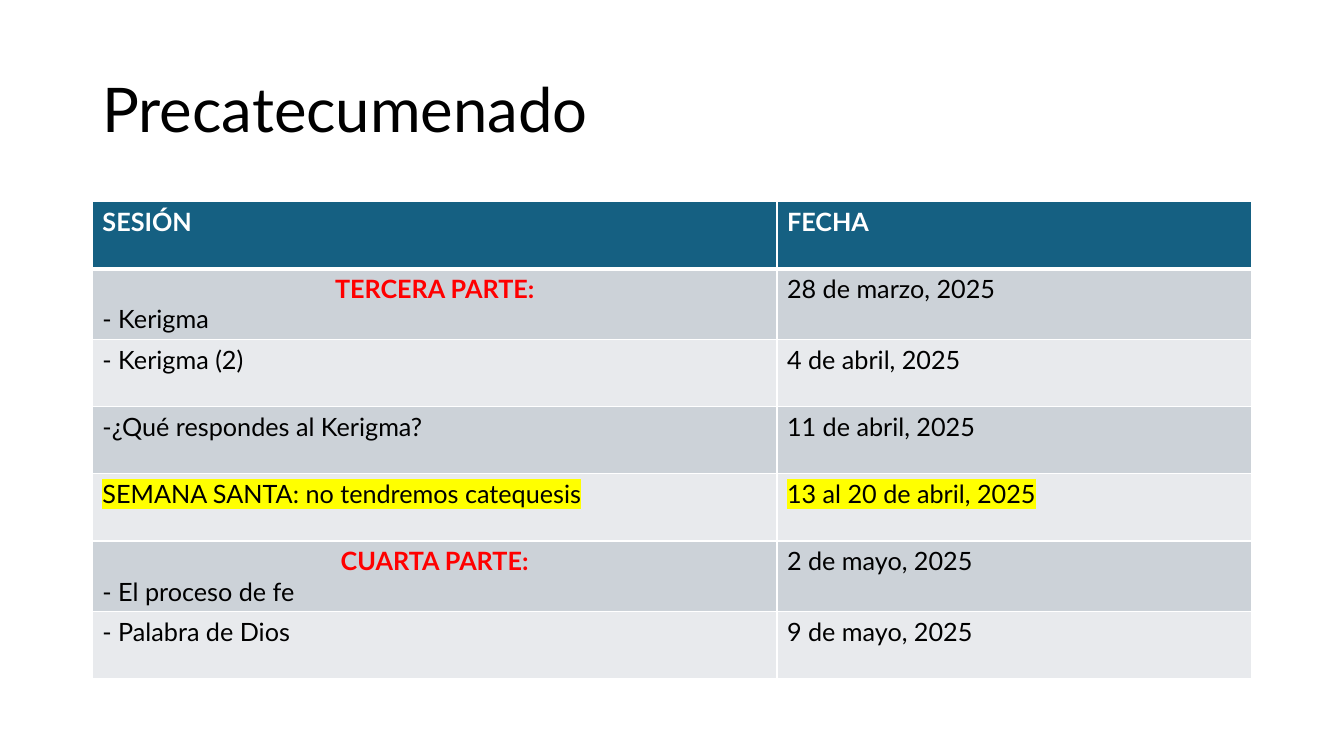
from lxml import etree
from pptx import Presentation
from pptx import util as u
from pptx.dml.color import RGBColor
from pptx.enum import text
from pptx.oxml import ns

PX = 9525  # 96 px to the inch
FONT = "Lato"
BLACK = RGBColor(0x00, 0x00, 0x00)
WHITE = RGBColor(0xFF, 0xFF, 0xFF)
RED = RGBColor(0xFF, 0x00, 0x00)
YELLOW = RGBColor(0xFF, 0xFF, 0x00)
HEADER = RGBColor(0x15, 0x60, 0x82)
BANDS = (RGBColor(0xCC, 0xD2, 0xD8), RGBColor(0xE8, 0xEA, 0xED))

COLUMN_WIDTHS = (652, 452)
ROW_HEIGHT = 64
HEADINGS = ("SESIÓN", "FECHA")
# part heading, session, date, highlighted
SESSIONS = (
    ("TERCERA PARTE:", "- Kerigma", "28 de marzo, 2025", False),
    (None, "- Kerigma (2)", "4 de abril, 2025", False),
    (None, "-¿Qué respondes al Kerigma?", "11 de abril, 2025", False),
    (None, "SEMANA SANTA: no tendremos catequesis", "13 al 20 de abril, 2025", True),
    ("CUARTA PARTE:", "- El proceso de fe", "2 de mayo, 2025", False),
    (None, "- Palabra de Dios", "9 de mayo, 2025", False),
)


def px(length):
    return u.Emu(length * PX)


def set_font(para, size, color, bold=False):
    font = para.font
    font.name, font.size, font.bold = FONT, u.Pt(size), bold
    font.color.rgb = color


def highlight(span):
    properties = span.font._element if hasattr(span.font, "_element") else span._r.get_or_add_rPr()
    mark = etree.SubElement(properties, ns.qn("a:highlight"))
    etree.SubElement(mark, ns.qn("a:srgbClr"), val=str(YELLOW))


def add_title(slide, wording):
    title = slide.shapes.title
    title.left, title.top, title.width, title.height = map(px, (88, 38, 1104, 139))
    frame = title.text_frame
    frame.text = wording
    frame.vertical_anchor = text.MSO_ANCHOR.MIDDLE
    para = frame.paragraphs[0]
    para.alignment = text.PP_ALIGN.LEFT
    para.line_spacing = 0.9
    set_font(para, 44, BLACK)


def style_cell(cell, fill, bottom_points=1):
    """Give the cell white borders and a solid fill."""
    properties = cell._tc.get_or_add_tcPr()
    for side, points in (("L", 1), ("R", 1), ("T", 1), ("B", bottom_points)):
        line = etree.SubElement(properties, ns.qn("a:ln" + side), w=str(u.Pt(points)))
        paint = etree.SubElement(line, ns.qn("a:solidFill"))
        etree.SubElement(paint, ns.qn("a:srgbClr"), val=str(WHITE))
    cell.fill.solid()
    cell.fill.fore_color.rgb = fill


def write_cell(cell, wording, color=BLACK, bold=False, part=None, marked=False):
    """Write the wording, below a centred part heading if there is one."""
    para = cell.text_frame.paragraphs[0]
    if part:
        para.add_run().text = part
        para.alignment = text.PP_ALIGN.CENTER
        set_font(para, 18, RED, bold=True)
        para = cell.text_frame.add_paragraph()
    span = para.add_run()
    span.text = wording
    set_font(para, 18, color, bold)
    if marked:
        highlight(span)


def add_schedule(slide):
    rows = len(SESSIONS) + 1
    frame = slide.shapes.add_table(rows, len(COLUMN_WIDTHS), px(88), px(192),
                                   px(sum(COLUMN_WIDTHS)), px(ROW_HEIGHT * rows))
    table = frame.table
    for column, width in zip(table.columns, COLUMN_WIDTHS):
        column.width = px(width)
    for index, heading in enumerate(HEADINGS):
        cell = table.cell(0, index)
        style_cell(cell, HEADER, bottom_points=3)
        write_cell(cell, heading, WHITE, bold=True)
    for row, (part, session, date, marked) in enumerate(SESSIONS, 1):
        for index, wording in enumerate((session, date)):
            cell = table.cell(row, index)
            style_cell(cell, BANDS[(row - 1) % 2])
            write_cell(cell, wording, part=None if index else part, marked=marked)


def main():
    deck = Presentation()
    deck.slide_width, deck.slide_height = px(1280), px(720)
    slide = deck.slides.add_slide(deck.slide_layouts[5])
    add_title(slide, "Precatecumenado")
    add_schedule(slide)
    deck.save("out.pptx")


if __name__ == "__main__":
    main()
